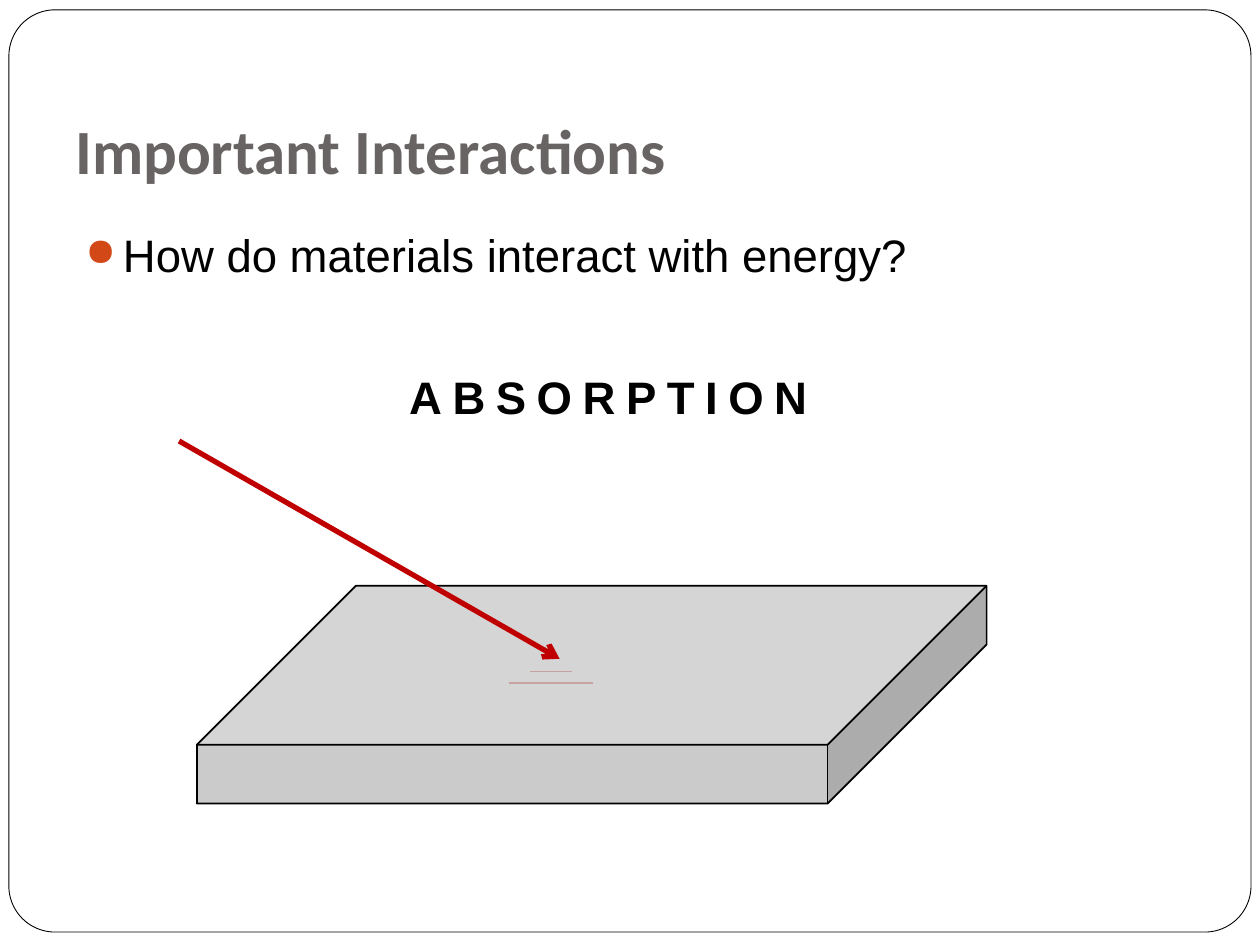
from lxml import etree
from pptx import Presentation
from pptx import util as u
from pptx.dml.color import RGBColor
from pptx.enum import shapes, text
from pptx.oxml import ns

WHITE = RGBColor(0xFF, 0xFF, 0xFF)
BLACK = RGBColor(0, 0, 0)
TITLE_GREY = RGBColor(0x69, 0x64, 0x64)
SLAB_GREY = RGBColor(0xBF, 0xBF, 0xBF)
RAY_RED = RGBColor(0xC0, 0, 0)
BULLET_ORANGE = RGBColor(0xD3, 0x48, 0x17)


def add_xml(parent, tag, **attrs):
    """Append a DrawingML element and return it."""
    return etree.SubElement(parent, ns.qn(tag), attrs)


def add_block(s, kind, box, fill, width):
    """Add a filled, black-outlined preset shape in a box given in cm."""
    sp = s.shapes.add_shape(kind, *map(u.Cm, box))
    sp.shadow.inherit = False
    sp.fill.solid()
    sp.fill.fore_color.rgb = fill
    sp.line.color.rgb = BLACK
    sp.line.width = u.Pt(width)
    return sp


def add_ray(s, x1, y1, x2, y2, width):
    """Add a red line between two points given in cm."""
    ray = s.shapes.add_connector(
        shapes.MSO_CONNECTOR.STRAIGHT, *map(u.Cm, (x1, y1, x2, y2)))
    ray.line.color.rgb = RAY_RED
    ray.line.width = u.Pt(width)
    add_xml(ray._element.spPr, "a:effectLst")
    return ray


def add_text_frame(s, box):
    """Add a wrapping text box in a box given in cm and return its frame."""
    tf = s.shapes.add_textbox(*map(u.Cm, box)).text_frame
    tf.word_wrap = True
    return tf


def add_run(p, words, font, size, color, bold=False):
    """Add one formatted run to a paragraph."""
    r = p.add_run()
    r.text = words
    r.font.name = font
    r.font.size = u.Pt(size)
    r.font.color.rgb = color
    r.font.bold = bold
    return r


def add_frame(s, box):
    """Draw the rounded border of the slide."""
    sp = add_block(s, shapes.MSO_SHAPE.ROUNDED_RECTANGLE, box, WHITE, 0.5)
    sp.adjustments[0] = 0.05


def add_title(s, box):
    """Write the title at the bottom of its box."""
    tf = add_text_frame(s, box)
    tf.vertical_anchor = text.MSO_ANCHOR.BOTTOM
    tf.margin_bottom = u.Cm(0.25)
    add_run(tf.paragraphs[0], "Important Interactions", "Calibri", 36, TITLE_GREY, True)


def add_body(s, box):
    """Write the bulleted question and the name of the interaction."""
    tf = add_text_frame(s, box)
    p = tf.paragraphs[0]
    p.space_before, p.space_after = u.Pt(12), u.Pt(6)
    pPr = p._p.get_or_add_pPr()
    pPr.set("marL", str(u.Cm(0.76)))
    pPr.set("indent", str(-u.Cm(0.76)))
    add_xml(add_xml(pPr, "a:buClr"), "a:srgbClr", val=str(BULLET_ORANGE))
    add_xml(pPr, "a:buSzPct", val="85000")
    add_xml(pPr, "a:buChar", char="●")
    add_run(p, "How do materials interact with energy?", "Arial", 26, BLACK)

    p = tf.add_paragraph()
    p.alignment = text.PP_ALIGN.CENTER
    p.space_before = u.Pt(44)
    r = add_run(p, "ABSORPTION", "Arial", 26, BLACK, True)
    r.font._element.set("spc", "600")


def add_absorption(s, box):
    """Draw a ray striking a translucent slab, with ripples fading inside it."""
    left, top, width, height = box
    hit_x = left + 7.5
    for half, drop in ((0.42, 4.65), (0.84, 4.88)):
        add_ray(s, hit_x - half, top + drop, hit_x + half, top + drop, 0.75)

    slab_box = (left + 0.36, top + 2.92, width - 0.36, height - 2.92)
    slab = add_block(s, shapes.MSO_SHAPE.CUBE, slab_box, SLAB_GREY, 1)
    slab.adjustments[0] = 0.73
    color = slab._element.spPr.find(ns.qn("a:solidFill"))[0]
    add_xml(color, "a:alpha", val="80000")

    ray = add_ray(s, left, top, left + 7.67, top + 4.39, 3)
    add_xml(ray.line._get_or_add_ln(), "a:tailEnd", type="arrow")


def main():
    """Build and save the slide."""
    prs = Presentation()
    prs.slide_width, prs.slide_height = u.Cm(25.4), u.Cm(19.05)
    s = prs.slides.add_slide(prs.slide_layouts[6])
    add_frame(s, (0.18, 0.2, 25.04, 18.59))
    add_body(s, (1.47, 4.45, 21.59, 12.7))
    add_absorption(s, (3.61, 8.89, 16.28, 7.31))
    add_title(s, (1.27, 0.84, 21.59, 3.18))
    prs.save("out.pptx")


if __name__ == "__main__":
    main()
